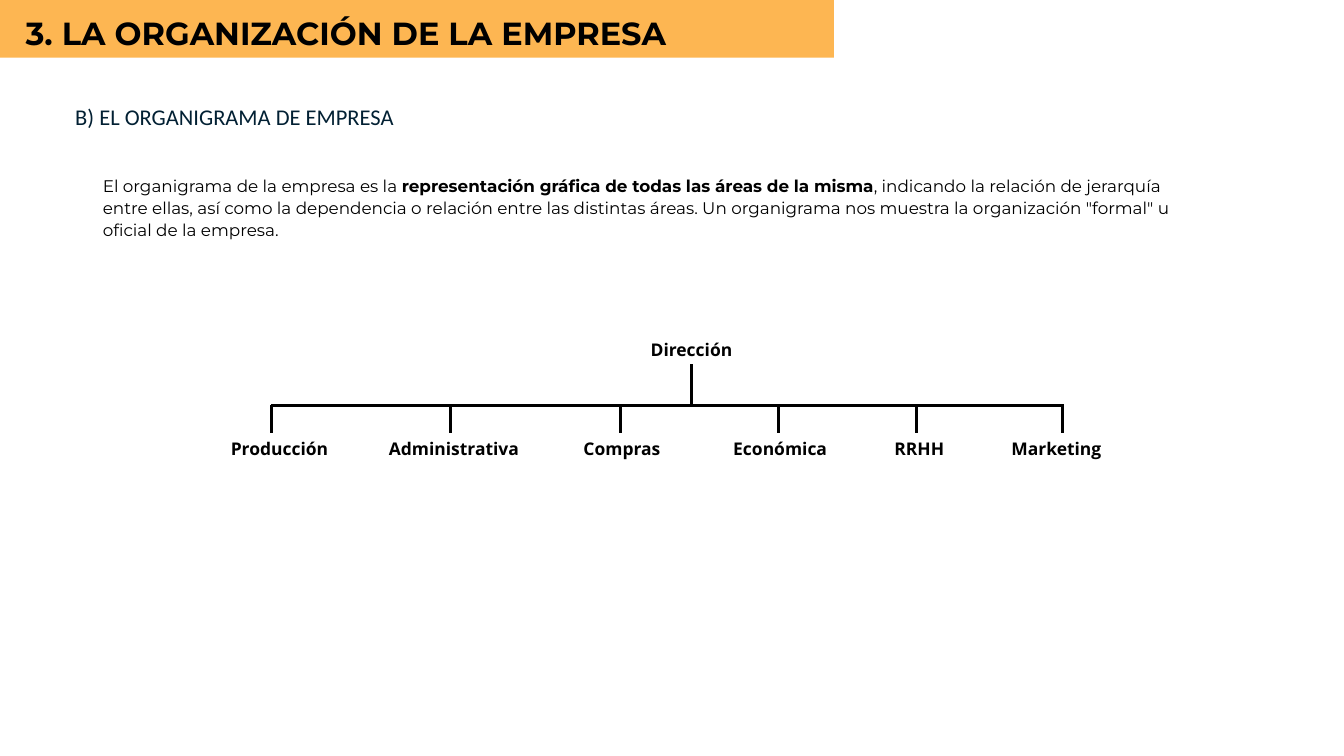
from lxml.etree import SubElement
from pptx import Presentation
from pptx.dml.color import RGBColor
from pptx.enum.shapes import MSO_CONNECTOR as Conn, MSO_SHAPE as Shape
from pptx.enum.text import MSO_ANCHOR as Anchor, PP_ALIGN as Align
from pptx.oxml.ns import qn
from pptx.util import Inches, Pt

COLS, ROWS = 20, 11.25
HUES = {"band": "FDB652", "ink": "000000", "navy": "022033"}

TITLE = "3. LA ORGANIZACIÓN DE LA EMPRESA"
HEAD = "B) EL ORGANIGRAMA DE EMPRESA"
BODY = [
    ("El organigrama de la empresa es la ", False),
    ("representación gráfica de todas las áreas de la misma", True),
    (", indicando la relación de jerarquía entre ellas, así como la dependencia "
     "o relación entre las distintas áreas. Un organigrama nos muestra la "
     "organización \"formal\" u oficial de la empresa.", False),
]
ROOT = "Dirección"
# area, stem column, label column, label width
AREAS = [
    ("Producción", 4.04, 3.41, 1.5),
    ("Administrativa", 6.7, 5.54, 2.43),
    ("Compras", 9.23, 8.66, 1.19),
    ("Económica", 11.59, 10.89, 1.44),
    ("RRHH", 13.64, 13.28, 0.8),
    ("Marketing", 15.81, 15.02, 1.4),
]
BAR, FOOT, NAMES = 6.03, 6.44, 6.47

deck = Presentation()
deck.slide_width, deck.slide_height = Inches(COLS), Inches(ROWS)
slide = deck.slides.add_slide(deck.slide_layouts[5])
shapes = slide.shapes


def grid(*cells):
    return [round(deck.slide_width * cell / COLS) for cell in cells]


def color(key):
    return RGBColor.from_string(HUES[key])


def write(box, runs, face, size, lead, hue="ink", align=Align.LEFT, wrap=True):
    frame = box.text_frame
    frame.word_wrap = wrap
    frame.vertical_anchor = Anchor.TOP
    frame.margin_left = frame.margin_right = 0
    frame.margin_top = frame.margin_bottom = 0
    para = frame.paragraphs[0]
    para.alignment = align
    para.line_spacing = Pt(lead)
    para.space_before = Pt(0)
    for text, bold in runs:
        run = para.add_run()
        run.text = text
        font = run.font
        font.name, font.size, font.bold = face, Pt(size), bold
        font.color.rgb = color(hue)


def label(text, left, top, width, height):
    box = shapes.add_textbox(*grid(left, top, width, height))
    write(box, [(text, True)], "Open Sans", 18.7, 26.2,
          align=Align.CENTER, wrap=False)
    return box


def line(*ends):
    link = shapes.add_connector(Conn.STRAIGHT, *grid(*ends))
    link.line.color.rgb = color("ink")
    link.line.width = Pt(3)
    SubElement(link._element.spPr, qn("a:effectLst"))
    return link


band = shapes.add_shape(Shape.RECTANGLE, *grid(0, 0, 12.41, 0.86))
band.shadow.inherit = False
band.fill.solid()
band.fill.fore_color.rgb = color("band")
band.line.fill.background()
shapes._spTree.insert(2, band._element)

title = shapes.title
title.left, title.top, title.width, title.height = grid(0.38, 0.11, 9.62, 0.63)
write(title, [(TITLE, True)], "Montserrat", 34.2, 48)

head = shapes.add_textbox(*grid(1.12, 1.62, 12.53, 0.33))
write(head, [(HEAD, False)], "Calibri", 24.1, 22.2, "navy")
body = shapes.add_textbox(*grid(1.53, 2.59, 16.31, 0.96))
write(body, BODY, "Montserrat", 18, 23.4)

root = label(ROOT, 9.68, 5, 1.22, 0.42)
line(10.29, 5.42, 10.29, BAR).begin_connect(root, 2)
line(AREAS[0][1], BAR, AREAS[-1][1] + 0.02, BAR)
for name, stem, left, width in AREAS:
    label(name, left, NAMES, width, 0.35)
    line(stem, FOOT, stem, BAR)

deck.save("out.pptx")
